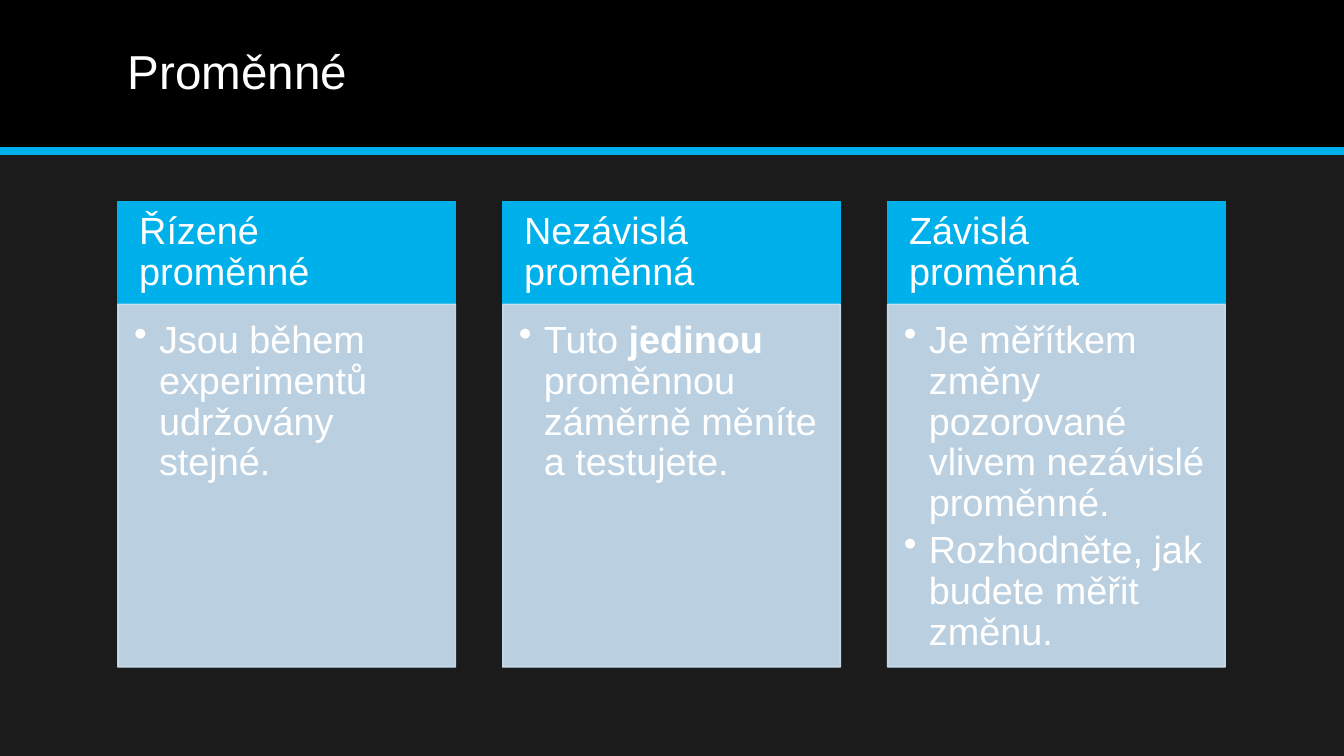
"""Build a slide that compares controlled, independent and dependent variables."""
from dataclasses import dataclass

from lxml import etree
from pptx import Presentation, util as u
from pptx.dml.color import RGBColor
from pptx.enum import shapes, text
from pptx.oxml.ns import qn


@dataclass(frozen=True)
class Theme:
    font: str = "Arial"
    background: str = "1B1B1B"
    band: str = "000000"
    accent: str = "00B0EA"
    panel: str = "CCE4F7"
    text: str = "FFFFFF"
    title_size: int = 34
    card_size: int = 27


theme = Theme()


def write(frame, paragraphs, size=theme.card_size, anchor=text.MSO_ANCHOR.MIDDLE,
          margins=(0.25, 0.13, 0.25, 0.13), bullet=False):
    """Fill a text frame; each paragraph is a list of (words, bold) pairs."""
    frame.word_wrap = True
    frame.auto_size = text.MSO_AUTO_SIZE.NONE
    frame.vertical_anchor = anchor
    frame.margin_left, frame.margin_top, frame.margin_right, frame.margin_bottom = map(u.Cm, margins)
    for index, runs in enumerate(paragraphs):
        paragraph = frame.add_paragraph() if index else frame.paragraphs[0]
        paragraph.alignment = text.PP_ALIGN.LEFT
        paragraph.line_spacing = 0.9
        if bullet:
            paragraph.space_after = u.Pt(4)
            properties = paragraph._p.get_or_add_pPr()
            properties.set("marL", str(u.Cm(0.63)))
            properties.set("indent", str(-u.Cm(0.63)))
            etree.SubElement(properties, qn("a:buChar"), char="•")
        for words, bold in runs:
            run = paragraph.add_run()
            run.text = words
            run.font.name = theme.font
            run.font.size = u.Pt(size)
            run.font.bold = bold
            run.font.color.rgb = RGBColor.from_string(theme.text)


def add_box(left, top, width, height, color, opacity=100):
    """Add a rectangle whose fill and outline share a colour and opacity."""
    box = slide.shapes.add_shape(shapes.MSO_SHAPE.RECTANGLE, *map(u.Cm, (left, top, width, height)))
    box.shadow.inherit = False
    box.fill.solid()
    box.line.width = u.Pt(1)
    for paint in (box.fill.fore_color, box.line.color):
        paint.rgb = RGBColor.from_string(color)
    if opacity < 100:
        for tint in box._element.spPr.iter(qn("a:srgbClr")):
            etree.SubElement(tint, qn("a:alpha"), val=str(opacity * 1000))
    return box


presentation = Presentation()
presentation.slide_width, presentation.slide_height = u.Cm(33.87), u.Cm(19.05)
slide = presentation.slides.add_slide(presentation.slide_layouts[5])
slide.background.fill.solid()
slide.background.fill.fore_color.rgb = RGBColor.from_string(theme.background)

add_box(0, 0, 33.87, 3.81, theme.band)
rule = slide.shapes.add_connector(shapes.MSO_CONNECTOR.STRAIGHT, 0, u.Cm(3.81), u.Cm(33.87), u.Cm(3.81))
rule.line.width = u.Pt(6)
rule.line.color.rgb = RGBColor.from_string(theme.accent)
etree.SubElement(rule._element.spPr, qn("a:effectLst"))

title = slide.shapes.title
title.left, title.top, title.width, title.height = map(u.Cm, (2.97, 0.35, 27.94, 3.05))
write(title.text_frame, [[("Proměnné", False)]], size=theme.title_size)
title.element.getparent().append(title.element)

columns = [
    ("Řízené proměnné", [[("Jsou během experimentů udržovány stejné.", False)]]),
    ("Nezávislá proměnná", [[("Tuto ", False), ("jedinou", True),
                             (" proměnnou záměrně měníte a testujete.", False)]]),
    ("Závislá proměnná", [[("Je měřítkem změny pozorované vlivem nezávislé proměnné.", False)],
                          [("Rozhodněte, jak budete měřit změnu.", False)]]),
]
column_left, column_pitch, column_width = 2.97, 9.7, 8.51
header_top, header_height, panel_height = 5.08, 2.59, 9.14

for index, (heading, points) in enumerate(columns):
    left = column_left + index * column_pitch
    header = add_box(left, header_top, column_width, header_height, theme.accent)
    write(header.text_frame, [[(heading, False)]], margins=(0.54, 0.3, 0.54, 0.3))
    panel = add_box(left, header_top + header_height, column_width, panel_height, theme.panel, opacity=90)
    write(panel.text_frame, points, anchor=text.MSO_ANCHOR.TOP, margins=(0.41, 0.41, 0.48, 0.6), bullet=True)

presentation.save("out.pptx")
